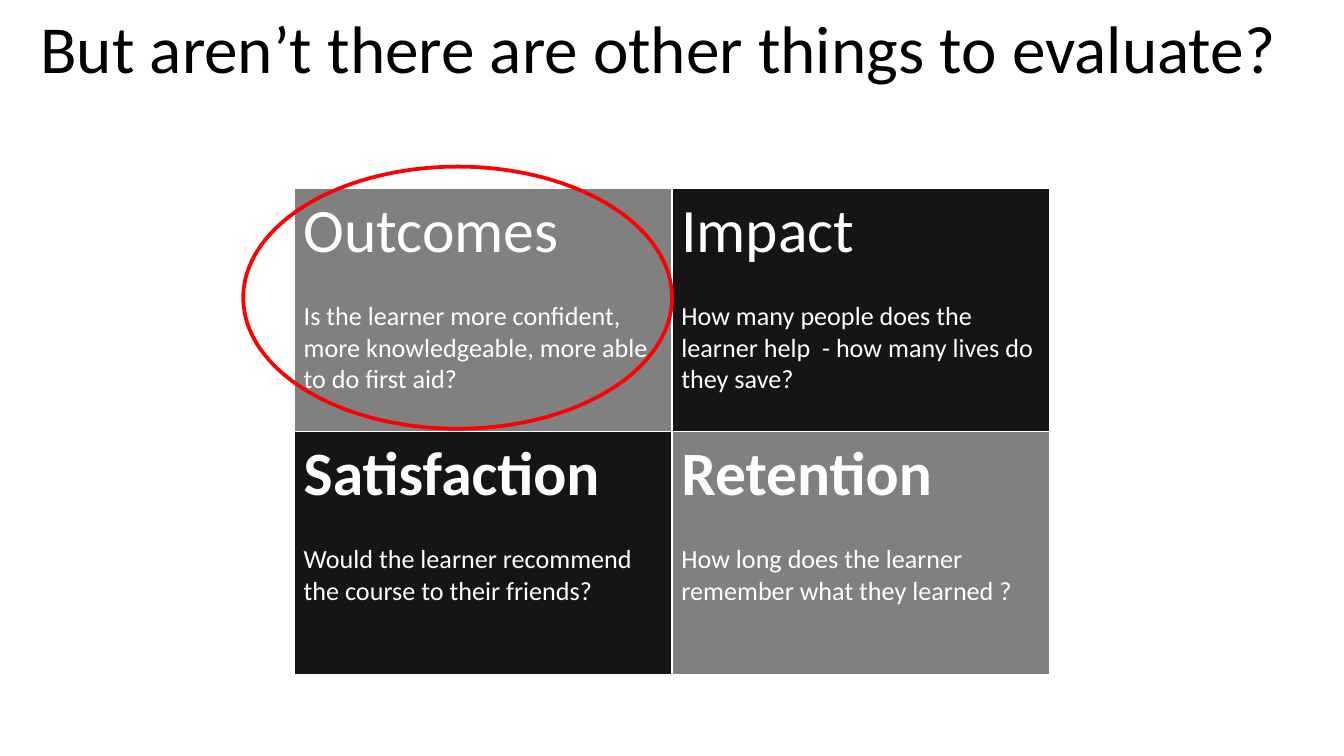
import pptx
import pptx.dml.color
import pptx.enum.shapes
import pptx.enum.text
import pptx.oxml
import pptx.oxml.ns
import pptx.util
from dataclasses import dataclass


@dataclass(frozen=True)
class Theme:
    font: str = "Calibri"
    ink: str = "000000"
    paper: str = "FFFFFF"
    dark: str = "161416"
    grey: str = "808080"
    highlight: str = "FF0000"
    title_size: int = 36
    heading_size: int = 33
    body_size: int = 14


def write(paragraph, text, *, size, color, bold=False, align=None, before=0):
    run = paragraph.add_run()
    run.text = text
    run.font.name = theme.font
    run.font.size = pptx.util.Pt(size)
    run.font.bold = bold
    run.font.color.rgb = pptx.dml.color.RGBColor.from_string(color)
    paragraph.alignment = align
    if before:
        paragraph.space_before = pptx.util.Pt(before)


def outline_cell(cell, color, points):
    """Draw all four borders; the lines must come ahead of the cell's fill."""
    properties = cell._tc.get_or_add_tcPr()
    for index, side in enumerate(("lnL", "lnR", "lnT", "lnB")):
        properties.insert(index, pptx.oxml.parse_xml(
            f'<a:{side} {pptx.oxml.ns.nsdecls("a")} w="{pptx.util.Pt(points)}">'
            f'<a:solidFill><a:srgbClr val="{color}"/></a:solidFill></a:{side}>'))


theme = Theme()
prs = pptx.Presentation()
prs.slide_width = pptx.util.Inches(10)
prs.slide_height = prs.slide_width * 9 // 16
slide = prs.slides.add_slide(prs.slide_layouts[6])

# Title
title = slide.shapes.add_textbox(
    pptx.util.Inches(0.07), 0, pptx.util.Inches(9.66), pptx.util.Inches(0.94)).text_frame
title.word_wrap = True
title.vertical_anchor = pptx.enum.text.MSO_ANCHOR.TOP
title.margin_top = pptx.util.Inches(0.05)
write(title.paragraphs[0], "But aren’t there are other things to evaluate?",
      size=theme.title_size, color=theme.ink, align=pptx.enum.text.PP_ALIGN.CENTER)

# Two-by-two grid of things to evaluate, centred across the slide
measures = [
    [("Outcomes", "Is the learner more confident, more knowledgeable, more able to do first aid?"),
     ("Impact", "How many people does the learner help  - how many lives do they save?")],
    [("Satisfaction", "Would the learner recommend the course to their friends?"),
     ("Retention", "How long does the learner remember what they learned ?")],
]
column = pptx.util.Inches(2.81)
row = pptx.util.Inches(1.81)
grid_left = prs.slide_width // 2 - column
grid_top = pptx.util.Inches(1.4)
grid = slide.shapes.add_table(2, 2, grid_left, grid_top, 2 * column, 2 * row).table
for r, measure_row in enumerate(measures):
    for c, (heading, question) in enumerate(measure_row):
        cell = grid.cell(r, c)
        cell.margin_left = cell.margin_right = pptx.util.Inches(0.07)
        cell.margin_top = cell.margin_bottom = pptx.util.Inches(0.04)
        cell.fill.solid()
        cell.fill.fore_color.rgb = pptx.dml.color.RGBColor.from_string(
            theme.dark if (r + c) % 2 else theme.grey)
        outline_cell(cell, theme.paper, 1)
        write(cell.text_frame.paragraphs[0], heading,
              size=theme.heading_size, color=theme.paper, bold=r == 1)
        write(cell.text_frame.add_paragraph(), question,
              size=theme.body_size, color=theme.paper, before=17)

# Ring around Outcomes, ending at the middle of the slide
ring_width = pptx.util.Inches(3.19)
ring = slide.shapes.add_shape(
    pptx.enum.shapes.MSO_SHAPE.OVAL, prs.slide_width // 2 - ring_width,
    pptx.util.Inches(1.24), ring_width, pptx.util.Inches(1.95))
ring.shadow.inherit = False
ring.fill.background()
ring.line.color.rgb = pptx.dml.color.RGBColor.from_string(theme.highlight)
ring.line.width = pptx.util.Pt(2)

prs.save("out.pptx")
